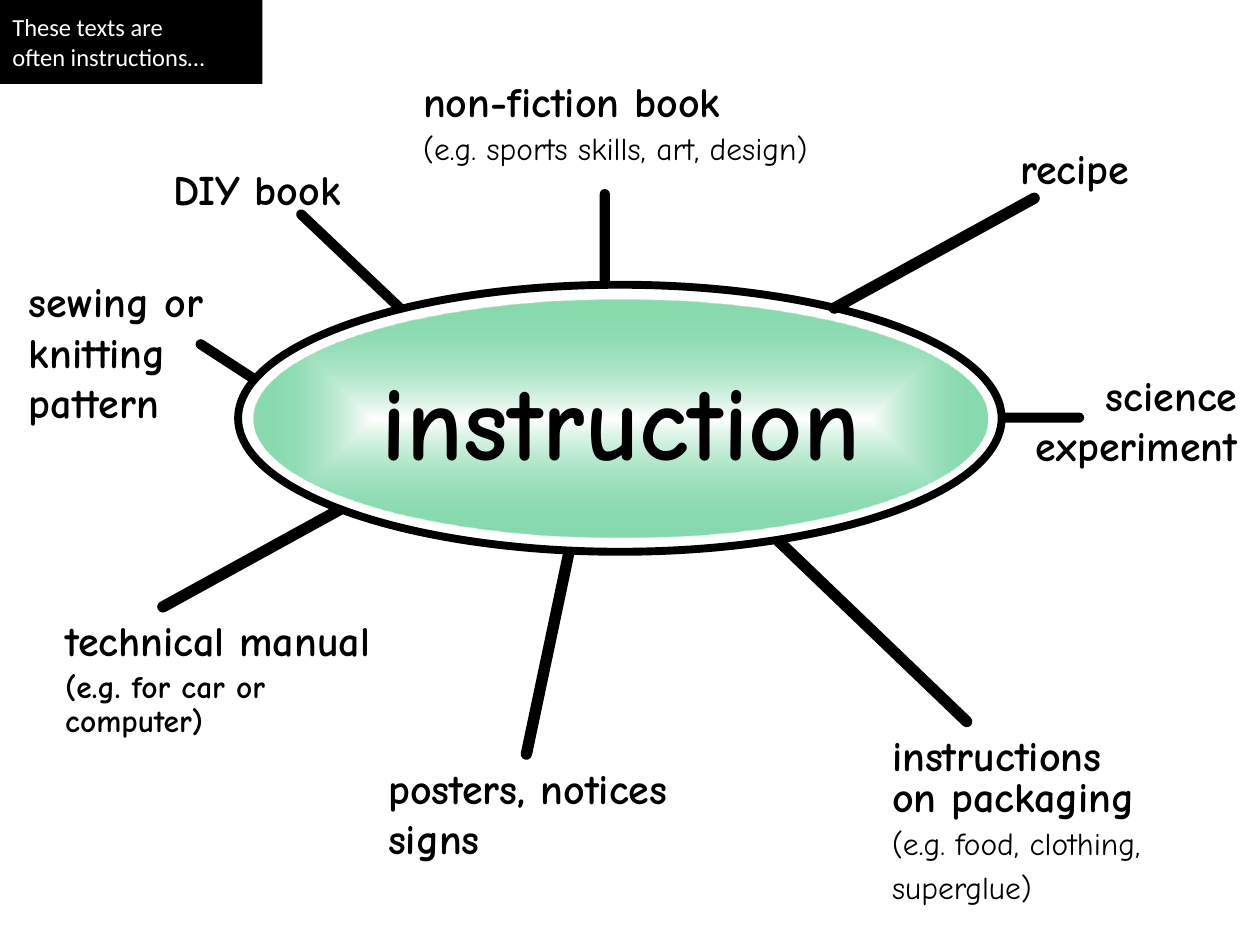
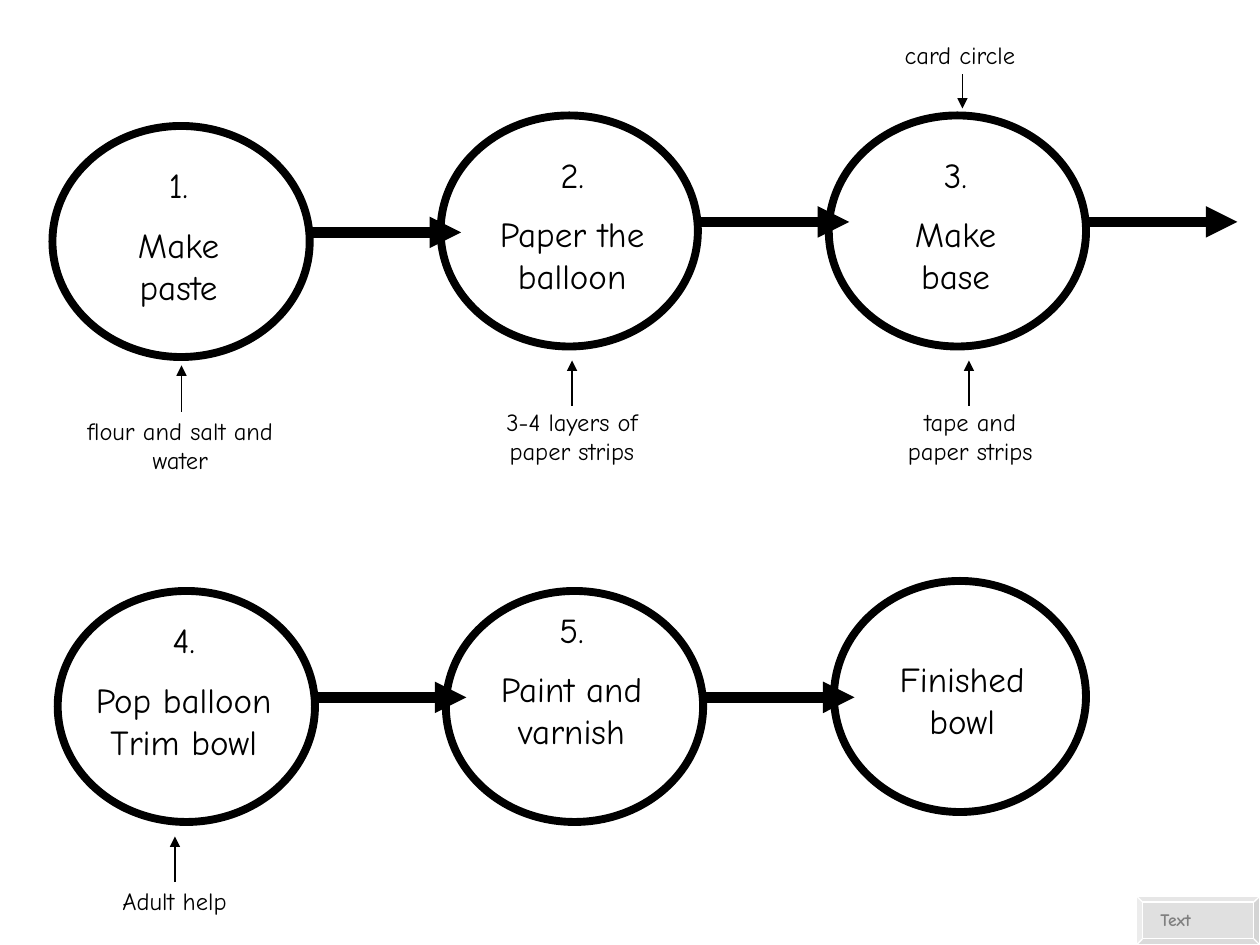
"""Build two slides: a mind map of instruction texts and a flow chart for a paper bowl."""
import pptx
import pptx.dml.color
import pptx.enum.shapes
import pptx.enum.text
import pptx.oxml
import pptx.oxml.ns
import pptx.util

Pt = pptx.util.Pt
RGBColor = pptx.dml.color.RGBColor
SHAPE = pptx.enum.shapes.MSO_SHAPE
ALIGN = pptx.enum.text.PP_ALIGN
AUTO = pptx.enum.text.MSO_AUTO_SIZE
qn = pptx.oxml.ns.qn

BLACK = RGBColor(0x00, 0x00, 0x00)
WHITE = RGBColor(0xFF, 0xFF, 0xFF)
GREY = RGBColor(0x80, 0x80, 0x80)
GREEN = RGBColor(0x00, 0xB0, 0x52)
HAND, PLAIN = "Comic Neue", "Calibri"
INSET = (7.2, 3.6)

HEAD = dict(size=24, bold=True)
DETAIL = dict(size=18, bold=False)

# text box, paragraphs, text options, spoke box, spoke rotation
TOPICS_BEHIND = [
    ((92, 90, 126, 36), [("DIY book", HEAD)], {}, (198, 107.3, 5.8, 85), 313.5),
    ((9.4, 154, 126.7, 93.6), [("sewing or knitting pattern", HEAD)], {},
     (133.2, 182.2, 5.8, 56.9), 303),
    ((30.2, 347.8, 205.2, 79.2),
     [("technical manual", HEAD),
      ("(e.g. for car or computer)", dict(size=18, bold=True, before=3.6, spacing=0.9))],
     {}, (146.9, 247, 6.5, 136.8), 61.2),
    ((221.8, 435.6, 198.7, 57.6), [("posters, notices\nsigns", HEAD)],
     dict(inset=(0, 0)), (311, 298.8, 6.5, 136.8), 11.9),
    ((509.8, 416.9, 172.8, 103.7),
     [("instructions", HEAD),
      ("on packaging", dict(HEAD, before=7.2, spacing=0.5)),
      ("(e.g. food, clothing,", dict(DETAIL, before=3.6)),
      ("superglue)", dict(DETAIL, before=3.6))],
     dict(inset=(0, 0)), (495.4, 283, 6.5, 155.5), 133.8),
    ((570.2, 207.4, 144, 64.8), [("science experiment", HEAD)],
     dict(align=ALIGN.RIGHT), (588.2, 210.2, 5.8, 56.9), 270),
]
TOPICS_FRONT = [
    ((576, 77.8, 90, 36), [("recipe", HEAD)], {}, (530.6, 76.3, 6.5, 136.8), 61.2),
    ((234.7, 39.6, 275, 59.8),
     [("non-fiction book", HEAD),
      ("(e.g. sports skills, art, design)", dict(DETAIL, before=1.8))],
     {}, (342.7, 108, 5.8, 56.9), 0),
]
HUB_RING = (136.1, 162.7, 436.3, 152.6)
HUB_CORE = (144.7, 171.4, 419.8, 135.4)
CORNER_BAND = (0, 0, 150, 48)
CORNER_TEXT = (0, 3.6, 180, 41)

CIRCLE = (147, 132)
COLUMN_STEP = 221.8
ARROW_DROP, ARROW_LENGTH = 60.8, 86.5
# column, row left, circle top, paragraphs, text left, text top, text width
STEPS = [
    (0, 30, 72, ["1.", "Make paste"], 54, 90, 96),
    (1, 30, 66, ["2.", "Paper the balloon"], 270, 84, 114),
    (2, 30, 66, ["3.", "Make base"], 498, 84, 96),
    (0, 33, 337.7, ["4.", "Pop balloon Trim bowl"], 45, 350, 120),
    (1, 33, 337.7, ["5.", "Paint and varnish"], 278.6, 344, 96),
]
FINISH_CIRCLE = (476.6, 332, 144, 132)
FINISH_TEXT = (501.8, 372.2, 96, 55.4)
# text, text box, arrow x, arrow start y, arrow end y
NOTES = [
    ("flour and salt and water", (42.5, 234, 121, 41), 103.7, 235.4, 208.8),
    ("3-4 layers of paper strips", (275, 229, 103.7, 41), 326.9, 232, 206),
    ("tape and paper strips", (504.7, 229, 99.4, 41), 553.7, 232, 206),
    ("card circle", (506, 19.4, 85, 23.8), 550, 42.5, 62),
    ("Adult help", (43.9, 502.6, 111.6, 23.8), 100, 504, 478),
]
BUTTON = (649.4, 512, 70.6, 28)
BUTTON_TEXT = (656, 516.2, 64, 19.4)


def pts(box):
    return [Pt(v) for v in box]


def write(tf, text, size=14, bold=False, font=HAND, color=BLACK,
          align=ALIGN.LEFT, before=0, spacing=None, first=True):
    p = tf.paragraphs[0] if first else tf.add_paragraph()
    p.text = text
    p.alignment = align
    p.space_before = Pt(before)
    if spacing:
        p.line_spacing = spacing
    for r in p.runs:
        r.font.size, r.font.bold, r.font.name = Pt(size), bold, font
        r.font.color.rgb = color


def add_text(s, box, paragraphs, inset=INSET, **common):
    tf = s.shapes.add_textbox(*pts(box)).text_frame
    tf.word_wrap = True
    tf.auto_size = AUTO.SHAPE_TO_FIT_TEXT
    tf.margin_left = tf.margin_right = Pt(inset[0])
    tf.margin_top = tf.margin_bottom = Pt(inset[1])
    for i, (text, style) in enumerate(paragraphs):
        write(tf, text, first=i == 0, **{**common, **style})


def add_shape(s, kind, box, fill=None, line=None, width=4.5):
    sp = s.shapes.add_shape(kind, *pts(box))
    sp.shadow.inherit = False
    if fill is None:
        sp.fill.background()
    else:
        sp.fill.solid()
        sp.fill.fore_color.rgb = fill
    if line is None:
        sp.line.fill.background()
    else:
        sp.line.color.rgb = line
        sp.line.width = Pt(width)
    return sp


def add_arrow(s, x1, y1, x2, y2, width):
    cx = s.shapes.add_connector(pptx.enum.shapes.MSO_CONNECTOR.STRAIGHT,
                                *pts((x1, y1, x2, y2)))
    cx.line.color.rgb = BLACK
    cx.line.width = Pt(width)
    sp_pr = cx.element.spPr
    sp_pr.find(qn("a:ln")).append(pptx.oxml.parse_xml(
        f'<a:tailEnd {pptx.oxml.ns.nsdecls("a")} type="triangle"/>'))
    sp_pr.append(pptx.oxml.parse_xml(f'<a:effectLst {pptx.oxml.ns.nsdecls("a")}/>'))


def glow(sp):
    old = sp.element.spPr.find(qn("a:solidFill"))
    sp.element.spPr.replace(old, pptx.oxml.parse_xml(
        f'<a:gradFill {pptx.oxml.ns.nsdecls("a")} rotWithShape="1"><a:gsLst>'
        f'<a:gs pos="0"><a:srgbClr val="{WHITE}"/></a:gs>'
        f'<a:gs pos="100000"><a:srgbClr val="{GREEN}"><a:alpha val="46000"/></a:srgbClr></a:gs>'
        '</a:gsLst><a:path path="shape">'
        '<a:fillToRect l="50000" t="50000" r="50000" b="50000"/></a:path></a:gradFill>'))


def add_topics(s, topics):
    for box, paragraphs, options, spoke, rotation in topics:
        bar = add_shape(s, SHAPE.ROUNDED_RECTANGLE, spoke, fill=BLACK)
        bar.adjustments[0] = 0.5
        bar.rotation = rotation
        add_text(s, box, paragraphs, **options)


def build_mind_map(s):
    add_topics(s, TOPICS_BEHIND)
    add_shape(s, SHAPE.OVAL, HUB_RING, fill=WHITE, line=BLACK)
    core = add_shape(s, SHAPE.OVAL, HUB_CORE, fill=GREEN)
    glow(core)
    tf = core.text_frame
    tf.word_wrap = False
    tf.vertical_anchor = pptx.enum.text.MSO_ANCHOR.MIDDLE
    write(tf, "instruction", size=60, bold=True, align=ALIGN.CENTER)
    add_topics(s, TOPICS_FRONT)
    add_shape(s, SHAPE.RECTANGLE, CORNER_BAND, fill=BLACK)
    add_text(s, CORNER_TEXT, [("These texts are", {}), ("often instructions…", {})],
             font=PLAIN, color=WHITE)


def build_flow(s):
    for column, left, top, lines, x, y, w in STEPS:
        left += column * COLUMN_STEP
        right, mid = left + CIRCLE[0], top + ARROW_DROP
        add_arrow(s, right, mid, right + ARROW_LENGTH, mid, 6)
        add_shape(s, SHAPE.OVAL, (left, top, *CIRCLE), line=BLACK)
        add_text(s, (x, y, w, 91.4),
                 [(line, dict(before=10 * i)) for i, line in enumerate(lines)],
                 size=20, align=ALIGN.CENTER)
    add_shape(s, SHAPE.OVAL, FINISH_CIRCLE, line=BLACK)
    add_text(s, FINISH_TEXT, [("Finished bowl", {})], size=20, align=ALIGN.CENTER)
    for text, box, x, start, end in NOTES:
        add_text(s, box, [(text, {})], align=ALIGN.CENTER)
        add_arrow(s, x, start, x, end, 1)
    button = add_shape(s, SHAPE.BEVEL, BUTTON, fill=GREY, line=WHITE, width=0.75)
    button.adjustments[0] = 0.125
    button.element.spPr.find(qn("a:solidFill"))[0].append(pptx.oxml.parse_xml(
        f'<a:alpha {pptx.oxml.ns.nsdecls("a")} val="24000"/>'))
    add_text(s, BUTTON_TEXT, [("Text", {})], size=10, bold=True, color=GREY)


def main():
    prs = pptx.Presentation()
    prs.slide_width, prs.slide_height = Pt(720), Pt(540)
    for build in (build_mind_map, build_flow):
        build(prs.slides.add_slide(prs.slide_layouts[6]))
    prs.save("out.pptx")


if __name__ == "__main__":
    main()
